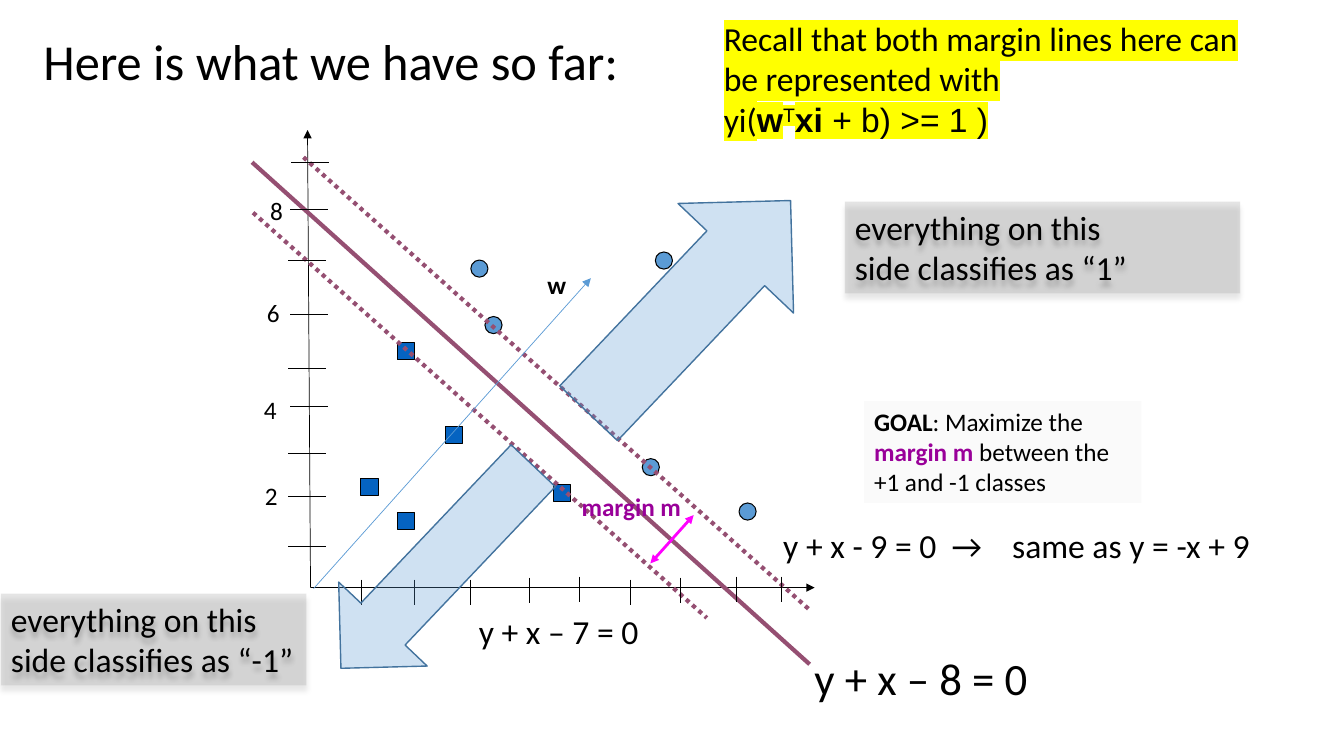
"""Builds the slide on margin lines between two classes."""
from dataclasses import dataclass

from pptx import Presentation
from pptx.dml.color import RGBColor
from pptx.enum.dml import MSO_LINE
from pptx.enum.shapes import MSO_CONNECTOR, MSO_SHAPE as Preset
from pptx.enum.text import MSO_ANCHOR, MSO_AUTO_SIZE, PP_ALIGN
from pptx.oxml.ns import qn
from pptx.oxml.xmlchemy import OxmlElement as Xml
from pptx.util import Inches, Pt

COLORS = {
    "black": "000000", "square": "0563C1", "blue": "5B9BD5", "arrow_edge": "43739E",
    "boundary": "954F72", "margin": "FF00FF", "purple": "990099", "gray": "9D9D9D",
    "pale": "FAFAFA", "yellow": "FFFF00",
}
TICK = 0.37
X_TICKS = [(3.58, 5.75), (4.11, 5.75), (4.67, 5.75), (5.25, 5.73), (5.75, 5.72),
           (6.25, 5.75), (6.75, 5.73), (7.3, 5.72), (7.75, 5.72)]
Y_TICKS = [(2.89, 1.61), (2.88, 2.08), (2.86, 2.58), (2.88, 3.12), (2.86, 3.65),
           (2.88, 4.03), (2.86, 4.5), (2.86, 4.92), (2.86, 5.42)]
SQUARES = [(3.94, 3.4), (4.42, 4.23), (3.58, 4.75), (3.94, 5.08), (5.49, 4.81)]
CIRCLES = [(4.67, 2.58), (4.81, 3.14), (6.5, 2.5), (6.37, 4.55), (7.33, 4.99)]


@dataclass(frozen=True)
class Span:
    """A stretch of text with one format."""
    text: str
    bold: bool = False
    color: str = "black"
    font: str = "Calibri"
    highlight: str = ""
    raised: bool = False


@dataclass(frozen=True)
class Stroke:
    """A straight line with optional arrowheads."""
    start: tuple[float, float]
    end: tuple[float, float]
    color: str = "black"
    width: float = 0.5
    dotted: bool = False
    heads: tuple[str, ...] = ()


@dataclass(frozen=True)
class Caption:
    """A block of text, plain or on a filled panel."""
    box: tuple[float, float, float, float]
    paragraphs: list[list[Span]]
    size: float = 24
    wrap: bool = True
    fill: str = ""
    opacity: int = 100
    indent: float = 0
    tab: float = 0


@dataclass(frozen=True)
class Marker:
    """A preset shape with fill and outline."""
    preset: Preset
    box: tuple[float, float, float, float]
    fill: str
    edge: str = "black"
    edge_width: float = 0.75
    opacity: int = 100
    rotation: float = 0


def rgb(name: str) -> RGBColor:
    """Looks up a colour."""
    return RGBColor.from_string(COLORS[name])


def child(parent, tag: str, **attributes):
    """Appends an XML child with attributes."""
    node = Xml(tag)
    for key, value in attributes.items():
        node.set(key, str(value))
    parent.append(node)
    return node


def paint(shape, color: str, opacity: int) -> None:
    """Fills a shape, translucent if asked, without a shadow."""
    shape.shadow.inherit = False
    shape.fill.solid()
    shape.fill.fore_color.rgb = rgb(color)
    if opacity < 100:
        child(shape.element.spPr.find(qn("a:solidFill"))[0], "a:alpha", val=opacity * 1000)


def draw_stroke(slide, stroke: Stroke) -> None:
    """Draws a straight connector."""
    connector = slide.shapes.add_connector(
        MSO_CONNECTOR.STRAIGHT, *map(Inches, stroke.start + stroke.end))
    connector.line.color.rgb = rgb(stroke.color)
    connector.line.width = Pt(stroke.width)
    if stroke.dotted:
        connector.line.dash_style = MSO_LINE.ROUND_DOT
    properties = connector.element.spPr
    for head in stroke.heads:
        child(properties.find(qn("a:ln")), head, type="triangle")
    child(properties, "a:effectLst")


def draw_marker(slide, marker: Marker) -> None:
    """Draws a data point or block arrow."""
    shape = slide.shapes.add_shape(marker.preset, *map(Inches, marker.box))
    paint(shape, marker.fill, marker.opacity)
    shape.line.color.rgb = rgb(marker.edge)
    shape.line.width = Pt(marker.edge_width)
    shape.rotation = marker.rotation


def write_span(paragraph, span: Span, size: float) -> None:
    """Adds one formatted run."""
    run = paragraph.add_run()
    run.text = span.text
    run.font.size, run.font.bold, run.font.name = Pt(size), span.bold, span.font
    run.font.color.rgb = rgb(span.color)
    properties = run._r.get_or_add_rPr()
    if span.raised:
        properties.set("baseline", "30000")
    if span.highlight:
        highlight = Xml("a:highlight")
        child(highlight, "a:srgbClr", val=COLORS[span.highlight])
        properties.find(qn("a:solidFill")).addnext(highlight)


def draw_caption(slide, caption: Caption) -> None:
    """Draws a text block."""
    box = tuple(map(Inches, caption.box))
    if caption.fill:
        shape = slide.shapes.add_shape(Preset.RECTANGLE, *box)
        paint(shape, caption.fill, caption.opacity)
        shape.line.fill.background()
    else:
        shape = slide.shapes.add_textbox(*box)
    if caption.opacity < 100:
        shadow = child(shape.element.spPr.find(qn("a:effectLst")), "a:outerShdw",
                       blurRad=Pt(4), dist=Pt(4), dir=90 * 60000, rotWithShape=0)
        child(child(shadow, "a:srgbClr", val=COLORS["black"]), "a:alpha", val=36000)
    frame = shape.text_frame
    frame.word_wrap = caption.wrap
    frame.auto_size = MSO_AUTO_SIZE.SHAPE_TO_FIT_TEXT
    frame.vertical_anchor = MSO_ANCHOR.TOP
    for index, spans in enumerate(caption.paragraphs):
        paragraph = frame.add_paragraph() if index else frame.paragraphs[0]
        paragraph.alignment = PP_ALIGN.LEFT
        properties = paragraph._p.get_or_add_pPr()
        if caption.indent:
            properties.set("marL", str(Inches(caption.indent)))
        if caption.tab:
            child(child(properties, "a:tabLst"), "a:tab", pos=Inches(caption.tab), algn="l")
        for span in spans:
            write_span(paragraph, span, caption.size)


def side_caption(box: tuple[float, float, float, float], label: str, opacity: int,
                 wrap: bool) -> Caption:
    """Describes the panel that names the class of one side."""
    lines = ["everything on this", f"side classifies as “{label}”"]
    return Caption(box, [[Span(line)] for line in lines], wrap=wrap, fill="gray",
                   opacity=opacity)


def main() -> None:
    """Builds and saves the slide."""
    deck = Presentation()
    deck.slide_width, deck.slide_height = Inches(13.33), Inches(7.5)
    slide = deck.slides.add_slide(deck.slide_layouts[5])
    title = slide.shapes.title
    title.left, title.top, title.width, title.height = map(Inches, (0.33, 0.25, 8.5, 0.78))
    title.text_frame.vertical_anchor = MSO_ANCHOR.MIDDLE
    heading = title.text_frame.paragraphs[0]
    heading.alignment, heading.line_spacing = PP_ALIGN.LEFT, 0.9
    write_span(heading, Span("Here is what we have so far:"), 36)

    origin, tail = (3.08, 5.83), ("a:tailEnd",)
    axes = [Stroke(origin, end, heads=tail) for end in [(3.05, 1.29), (8.08, 5.83)]]
    points = [Marker(preset, (x, y, 0.17, 0.17), fill)
              for preset, fill, places in [(Preset.RECTANGLE, "square", SQUARES),
                                           (Preset.OVAL, "blue", CIRCLES)]
              for x, y in places]
    ticks = [Stroke((x, y), (x, y + 0.25)) for x, y in X_TICKS]
    ticks += [Stroke((x, y), (x + TICK, y)) for x, y in Y_TICKS]
    boundaries = [Stroke((3.01, 1.56), (8.03, 6.05), "boundary", 3, True),
                  Stroke((2.51, 2.11), (7.01, 6.13), "boundary", 3, True),
                  Stroke((2.5, 1.61), (8.03, 6.59), "boundary", 3)]
    side_arrows = [Marker(Preset.UP_ARROW, box, "blue", "arrow_edge", 1, 29, turn)
                   for box, turn in [((6.05, 1.59, 1.58, 2.91), 43.5),
                                     ((3.73, 4.24, 1.21, 2.77), 223.5)]]
    vectors = [Stroke((6.88, 5.11), (6.45, 5.59), "margin", 2, heads=("a:headEnd",) + tail),
               Stroke((3.11, 5.84), (5.86, 2.76), "blue", heads=tail)]
    goal = [Span("GOAL", True), Span(": Maximize the "), Span("margin m", True, "purple"),
            Span(" between the +1 and -1 classes")]
    recall = [[Span("Recall that both margin lines here can be represented with",
                    highlight="yellow")],
              [Span("yi(", highlight="yellow"), Span("w", True, "black", "Arial", "yellow"),
               Span("T", False, "black", "Arial", "yellow", True),
               Span("xi", True, "black", "Arial", "yellow"),
               Span(" + b) >= 1 )", False, "black", "Arial", "yellow")]]
    captions = [
        Caption((7.67, 5.16, 5, 0.5), [[Span("y + x - 9 = 0  →\tsame as y = -x + 9")]], tab=2.27),
        side_caption((8.38, 2, 3.92, 0.91), "1", 27, True),
        Caption((3.07, 6.01, 5.89, 0.5), [[Span("y + x – 7 = 0")]], indent=1.58),
        Caption((7.98, 6.41, 2.36, 0.64), [[Span("y + x – 8 = 0")]], 32, False),
        Caption((5.33, 2.62, 0.39, 0.4), [[Span("w", True)]], 18, False),
        Caption((8.57, 3.98, 2.75, 1.01), [goal], 18, fill="pale"),
        side_caption((0.01, 5.89, 3.03, 0.91), "-1", 26, False),
        Caption((5.67, 4.83, 1.2, 0.4), [[Span("margin m", True, "purple")]], 18, False),
        Caption((7.08, 0.13, 5.59, 1.31), recall),
    ]
    captions += [Caption((x, y, 0.33, 0.4), [[Span(number)]], 18, False) for number, x, y in
                 [("6", 2.55, 2.9), ("4", 2.52, 3.86), ("2", 2.53, 4.72), ("8", 2.58, 1.89)]]

    painters = {Stroke: draw_stroke, Marker: draw_marker, Caption: draw_caption}
    for part in axes + points + boundaries + ticks + side_arrows + vectors + captions:
        painters[type(part)](slide, part)
    deck.save("out.pptx")


if __name__ == "__main__":
    main()
